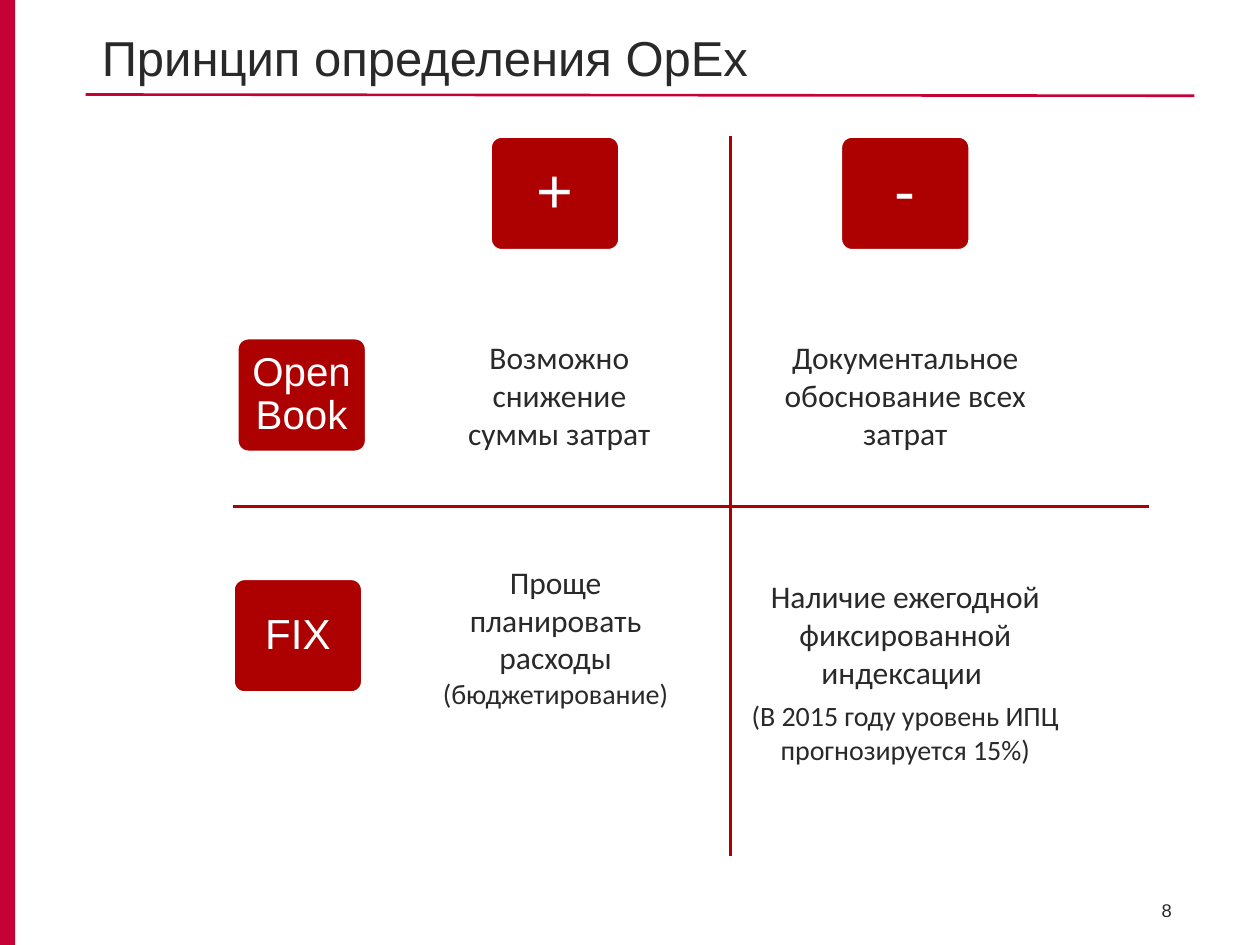
from lxml.etree import SubElement as Sub
from pptx import Presentation
from pptx.dml.color import RGBColor
from pptx.enum.shapes import MSO_CONNECTOR as Conn, MSO_SHAPE as Shape
from pptx.enum.text import MSO_ANCHOR as Anchor, PP_ALIGN as Align
from pptx.oxml.ns import qn
from pptx.util import Inches, Pt

WHITE = RGBColor(0xFF, 0xFF, 0xFF)
INK = RGBColor(0x29, 0x29, 0x29)
CRIMSON = RGBColor(0xC6, 0x01, 0x36)
RED = RGBColor(0xAD, 0x01, 0x01)
HEAD = "Arial"
BODY = "Calibri"
COLS, ROWS = 100, 75
TILE = (10.3, 9.1)


class Board:
    def __init__(self, deck):
        self.slide = deck.slides.add_slide(deck.slide_layouts[6])
        self.col = deck.slide_width / COLS
        self.row = deck.slide_height / ROWS

    def place(self, x, y, w, h):
        return (round(x * self.col), round(y * self.row),
                round(w * self.col), round(h * self.row))

    def style(self, para, size, face, ink, align):
        para.alignment = align
        font = para.font
        font.size, font.name = Pt(size), face
        font.color.rgb = ink

    def block(self, kind, box, fill):
        shape = self.slide.shapes.add_shape(kind, *self.place(*box))
        shape.shadow.inherit = False
        shape.fill.solid()
        shape.fill.fore_color.rgb = fill
        shape.line.fill.background()
        return shape

    def tile(self, x, y, text, size):
        shape = self.block(Shape.ROUNDED_RECTANGLE, (x, y, *TILE), RED)
        shape.adjustments[0] = 0.1
        shape.line.color.rgb = WHITE
        shape.line.width = Pt(2)
        frame = shape.text_frame
        frame.word_wrap = True
        frame.vertical_anchor = Anchor.MIDDLE
        frame.margin_left = frame.margin_right = Inches(0.08)
        para = frame.paragraphs[0]
        para.text = text
        para.line_spacing = 0.9
        self.style(para, size, HEAD, WHITE, Align.CENTER)

    def text(self, box, paras, face=BODY, align=Align.CENTER,
             anchor=Anchor.MIDDLE, lead=1):
        frame = self.slide.shapes.add_textbox(*self.place(*box)).text_frame
        frame.word_wrap = True
        frame.vertical_anchor = anchor
        for i, runs in enumerate(paras):
            para = frame.add_paragraph() if i else frame.paragraphs[0]
            para.line_spacing = lead
            if i:
                para.space_before = Pt(4.5)
            self.style(para, runs[0][1], face, INK, align)
            for words, size in runs:
                run = para.add_run()
                run.text = words
                if size != runs[0][1]:
                    run.font.size = Pt(size)

    def rule(self, x, y, end, foot, ink):
        line = self.slide.shapes.add_connector(
            Conn.STRAIGHT, *self.place(x, y, end, foot))
        line.line.color.rgb = ink
        line.line.width = Pt(1.5)
        Sub(line._element.spPr, qn("a:effectLst"))


def main():
    deck = Presentation()
    deck.slide_width, deck.slide_height = Inches(10), Inches(7.5)
    board = Board(deck)

    board.block(Shape.RECTANGLE, (0, 0, 1.2, ROWS), CRIMSON)
    board.rule(6.8, 7.5, 94.8, 7.6, CRIMSON)
    board.text((90.3, 70.9, 4.6, 2.8), [[("8", 10.5)]], HEAD, anchor=Anchor.TOP)
    board.text((7.1, 2.4, 87, 5), [[("Принцип определения ОрЕх", 28)]],
               HEAD, Align.LEFT, Anchor.BOTTOM, 0.93)

    for x, y, text, size in (
        (38.9, 10.8, "+", 36),
        (66.7, 10.8, "-", 36),
        (18.8, 26.8, "Open Book", 23),
        (18.5, 45.9, "FIX", 24),
    ):
        board.tile(x, y, text, size)

    for box, paras in (
        ((35.6, 26.3, 17.6, 10.1), [[("Возможно снижение суммы затрат", 18)]]),
        ((33.3, 44.1, 21.6, 12.8), [[("Проще планировать расходы ", 18),
                                     ("(бюджетирование)", 16)]]),
        ((58.7, 26.3, 26.3, 10.1),
         [[("Документальное обоснование всех затрат", 18)]]),
        ((58.4, 45.2, 26.9, 16.2),
         [[("Наличие ежегодной фиксированной индексации ", 18)],
          [("(В 2015 году уровень ИПЦ прогнозируется 15%)", 16)]]),
    ):
        board.text(box, paras)

    board.rule(18.5, 40.2, 91.2, 40.2, RED)
    board.rule(58, 10.8, 58, 67.9, RED)
    deck.save("out.pptx")


if __name__ == "__main__":
    main()
